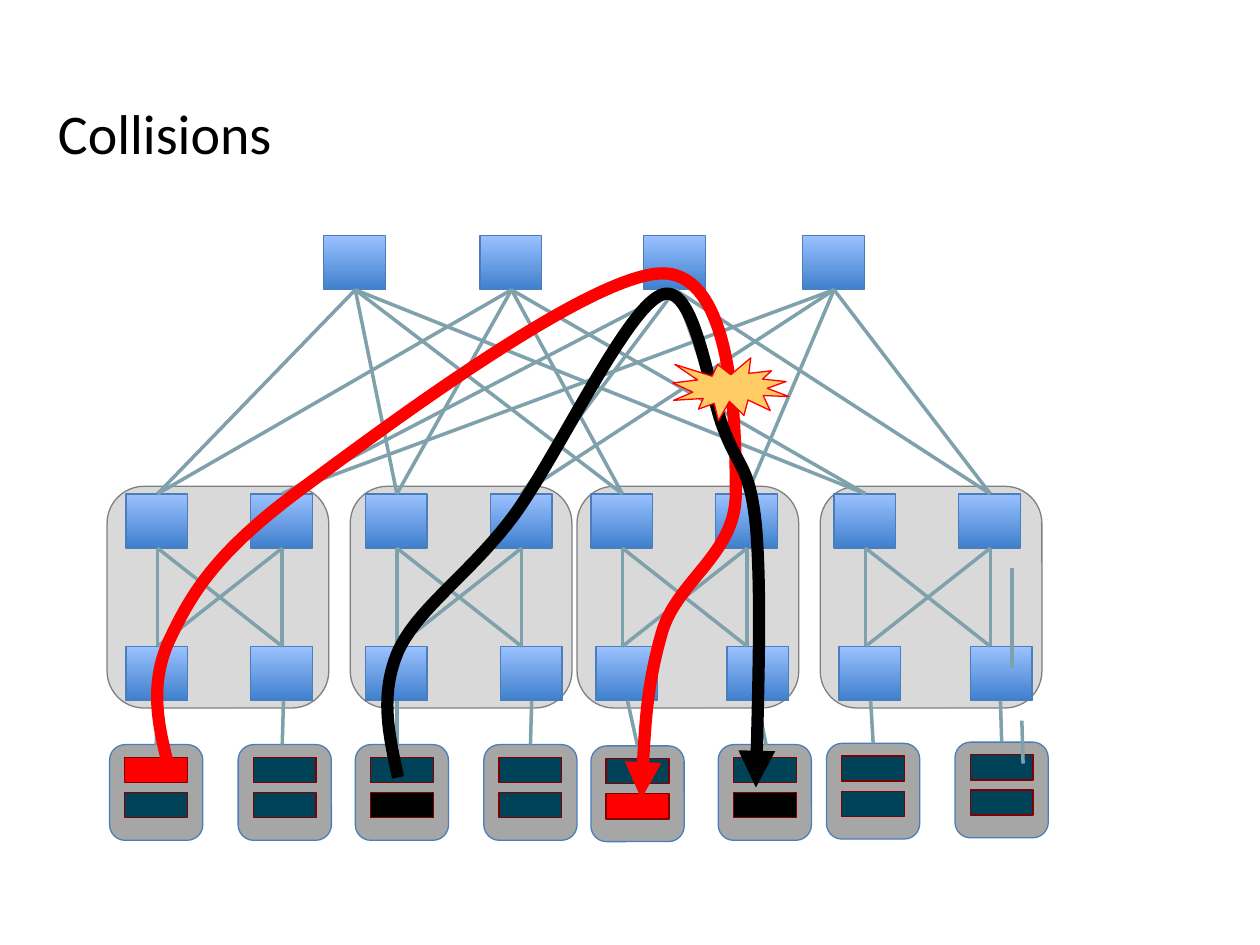
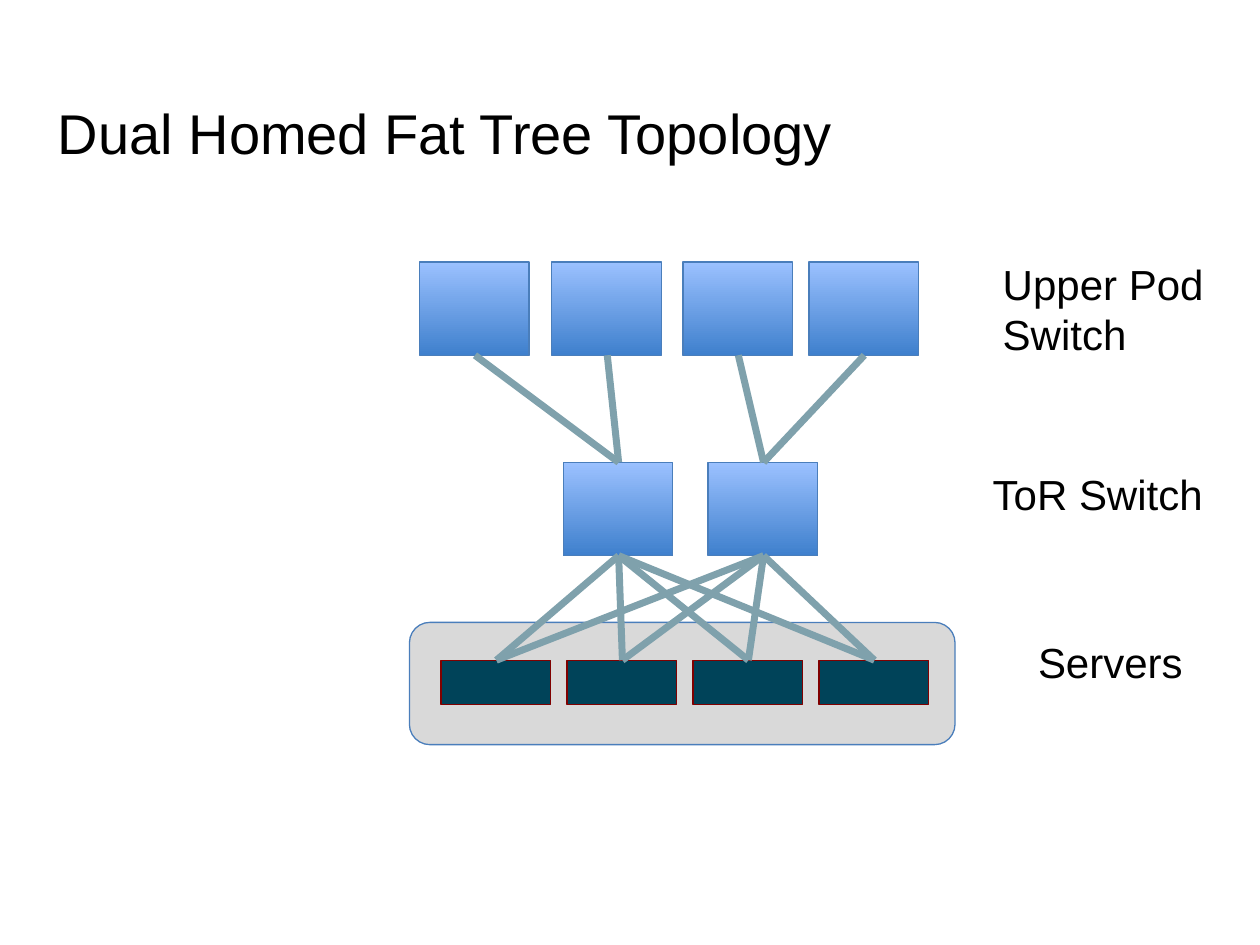
import itertools

import lxml.etree
import pptx
import pptx.dml.color
import pptx.enum.shapes
import pptx.enum.text
import pptx.oxml.ns
import pptx.util

EMU_PER_PX = 9144  # 100 px to the inch
SHAPES = pptx.enum.shapes.MSO_SHAPE
QN = pptx.oxml.ns.qn

COLORS = {
    "text": "000000",
    "switch_top": "9BC1FF",
    "switch_bottom": "3F80CD",
    "blue_line": "4A7EBB",
    "pod": "D9D9D9",
    "pod_line": "7F7F7F",
    "rack": "A6A6A6",
    "server": "004359",
    "server_line": "800000",
    "link": "7FA1AC",
    "red": "FF0000",
    "black": "000000",
    "burst": "FFCC66",
}
TITLE_BOX = (36, 50, 928, 109)
TITLE_FRAME = {
    "vertical_anchor": pptx.enum.text.MSO_ANCHOR.MIDDLE,
    "auto_size": pptx.enum.text.MSO_AUTO_SIZE.NONE,
    "word_wrap": True,
}
LABEL_FRAME = {
    "auto_size": pptx.enum.text.MSO_AUTO_SIZE.SHAPE_TO_FIT_TEXT,
    "word_wrap": False,
}

# Collisions slide
SWITCH_SIZE = (49, 43)
CORE_LEFTS = (257, 381, 511, 637)
CORE_TOP = 187
POD_TOP, POD_SIZE = 386, 176
UPPER_DROP, LOWER_DROP, UPPER_GAP = 6, 127, 99
PODS = (  # left, offset of first upper switch, offsets of lower switches
    (85, 15, (15, 114)),
    (278, 12, (12, 119)),
    (458, 11, (15, 119)),
    (651, 11, (15, 119)),
)
RACKS = (  # left, top, uplink top x, uplink bottom x, server colours
    (87, 591, 125, 124, ("red", "server")),
    (189, 591, 225, 224, ("server", "server")),
    (282, 591, 315, 315, ("server", "black")),
    (384, 591, 422, 421, ("server", "server")),
    (469, 592, 498, 506, ("server", "red")),
    (570, 591, 601, 608, ("server", "black")),
    (656, 590, 691, 693, ("server", "server")),
    (758, 589, 794, 795, ("server", "server")),
)
FLOWS = {  # start point, then three points for each curve
    "red": ((134, 609), (126, 577), (118, 545), (134, 509),
            (151, 473), (169, 441), (234, 392),
            (300, 343), (468, 217), (526, 217),
            (584, 217), (584, 345), (584, 392),
            (584, 439), (539, 460), (526, 500),
            (514, 541), (511, 587), (509, 634)),
    "black": ((316, 617), (309, 584), (301, 552), (316, 517),
              (332, 482), (373, 456), (408, 409),
              (443, 361), (497, 245), (525, 234),
              (552, 223), (562, 311), (575, 342),
              (587, 373), (595, 370), (600, 417),
              (604, 464), (602, 545), (600, 625)),
}
LOOSE_LINKS = (((803, 530), (803, 451)), ((812, 606), (811, 572)))

# Dual homed slide
TREE_BOX = (325, 208, 433, 383)
LABELS = (
    ((786, 200, 181, 91), ("Upper Pod", "Switch")),
    ((778, 367, 189, 51), ("ToR Switch",)),
    ((814, 500, 136, 51), ("Servers",)),
)


def px(value):
    return pptx.util.Emu(value * EMU_PER_PX)


def rgb(name):
    return pptx.dml.color.RGBColor.from_string(COLORS[name])


def set_attributes(target, values):
    for name, value in values.items():
        setattr(target, name, value)


def set_line(shape, color, points):
    shape.line.color.rgb = rgb(color)
    shape.line.width = pptx.util.Pt(points)


def add_block(shapes, kind, box, fill, line):
    shape = shapes.add_shape(kind, *map(px, box))
    shape.shadow.inherit = False
    shape.fill.solid()
    shape.fill.fore_color.rgb = rgb(fill)
    set_line(shape, line, 0.75)
    return shape


def add_switch(shapes, box):
    shape = add_block(shapes, SHAPES.RECTANGLE, box, "switch_top", "blue_line")
    shape.fill.gradient()
    shape.fill.gradient_angle = 270
    for stop, color in zip(shape.fill.gradient_stops, ("switch_top", "switch_bottom")):
        stop.color.rgb = rgb(color)


def add_link(shapes, start, end, points):
    connector = shapes.add_connector(
        pptx.enum.shapes.MSO_CONNECTOR.STRAIGHT, *map(px, (*start, *end)))
    set_line(connector, "link", points)
    lxml.etree.SubElement(connector._element.spPr, QN("a:effectLst"))


def add_flow(shapes, points, color):
    builder = shapes.build_freeform(*points[0], scale=EMU_PER_PX)
    builder.add_line_segments(points[1:], close=False)
    shape = builder.convert_to_shape()
    shape.shadow.inherit = False
    shape.fill.background()
    set_line(shape, color, 7)
    # Turn each three straight segments into one curve
    outline = shape._element.find(".//" + QN("a:path"))
    segments = outline.findall(QN("a:lnTo"))
    for first in range(0, len(segments), 3):
        curve = lxml.etree.SubElement(outline, QN("a:cubicBezTo"))
        for segment in segments[first:first + 3]:
            curve.append(segment[0])
            outline.remove(segment)
    arrowhead = lxml.etree.SubElement(shape.line._get_or_add_ln(), QN("a:tailEnd"))
    arrowhead.set("type", "triangle")


def write_lines(frame, lines, font_name, size):
    for index, line in enumerate(lines):
        paragraph = frame.paragraphs[0] if index == 0 else frame.add_paragraph()
        paragraph.alignment = pptx.enum.text.PP_ALIGN.LEFT
        run = paragraph.add_run()
        run.text = line
        set_attributes(run.font, {"name": font_name, "size": pptx.util.Pt(size)})
        run.font.color.rgb = rgb("text")


def add_titled_slide(presentation, title, font_name):
    slide = presentation.slides.add_slide(presentation.slide_layouts[5])
    shape = slide.shapes.title
    set_attributes(shape, dict(zip(("left", "top", "width", "height"), map(px, TITLE_BOX))))
    set_attributes(shape.text_frame, TITLE_FRAME)
    write_lines(shape.text_frame, (title,), font_name, 32)
    return slide


def draw_pod(shapes, left, top, upper_offset, lower_offsets):
    """Draw one pod and return the top centres of its upper switches."""
    width, height = SWITCH_SIZE
    add_block(shapes, SHAPES.ROUNDED_RECTANGLE, (left, top, POD_SIZE, POD_SIZE),
              "pod", "pod_line")
    upper_lefts = [left + upper_offset + step * UPPER_GAP for step in range(2)]
    for switch_left in upper_lefts:
        add_switch(shapes, (switch_left, top + UPPER_DROP, width, height))
    for offset in lower_offsets:
        add_switch(shapes, (left + offset, top + LOWER_DROP, width, height))
    centers = [switch_left + 25 for switch_left in upper_lefts]
    for lower, upper in itertools.product(centers, repeat=2):
        add_link(shapes, (lower, top + LOWER_DROP), (upper, top + UPPER_DROP + height), 2)
    return [(center, top + UPPER_DROP) for center in centers]


def draw_rack(shapes, left, top, uplink_top, uplink_bottom, server_colors):
    add_block(shapes, SHAPES.ROUNDED_RECTANGLE, (left, top, 74, 76), "rack", "blue_line")
    for row, color in enumerate(server_colors):
        add_block(shapes, SHAPES.RECTANGLE, (left + 12, top + 10 + 28 * row, 50, 20),
                  color, "server_line")
    add_link(shapes, (uplink_bottom, top), (uplink_top, 556), 2)


def draw_core(shapes, pod_ports):
    """Left switch of each pod joins cores 1 and 2, right switch cores 3 and 4."""
    width, height = SWITCH_SIZE
    for left in CORE_LEFTS:
        add_switch(shapes, (left, CORE_TOP, width, height))
    for ports in pod_ports:
        for index, left in enumerate(CORE_LEFTS):
            add_link(shapes, ports[index // 2], (left + 25, CORE_TOP + height), 2)


def build_collisions(presentation):
    shapes = add_titled_slide(presentation, "Collisions", "Calibri").shapes
    pod_ports = [draw_pod(shapes, left, POD_TOP, upper, lower)
                 for left, upper, lower in PODS]
    draw_core(shapes, pod_ports)
    for rack in RACKS:
        draw_rack(shapes, *rack)
    # Colliding flows
    for color, points in FLOWS.items():
        add_flow(shapes, points, color)
    add_block(shapes, SHAPES.EXPLOSION1, (534, 284, 92, 50), "burst", "red")
    for start, end in LOOSE_LINKS:
        add_link(shapes, start, end, 2)


def draw_tree(shapes, box):
    left, top, width, height = box
    switch_width, switch_height, half = 87, 74, 44
    upper_lefts = [left + offset for offset in (8, 113, 217, 317)]
    tor_lefts = [left + offset for offset in (122, 237)]
    server_lefts = [left + 25 + 100 * step for step in range(4)]
    tor_top, server_top = top + 159, top + 316
    # Server shelf
    add_block(shapes, SHAPES.ROUNDED_RECTANGLE, (left, top + height - 97, width, 97),
              "pod", "blue_line")
    for server_left in server_lefts:
        add_block(shapes, SHAPES.RECTANGLE, (server_left, server_top, switch_width, 35),
                  "server", "server_line")
    # Switches
    for row_top, lefts in ((top, upper_lefts), (tor_top, tor_lefts)):
        for switch_left in lefts:
            add_switch(shapes, (switch_left, row_top, switch_width, switch_height))
    # Links: each upper switch to one ToR, each server to both
    for index, upper_left in enumerate(upper_lefts):
        add_link(shapes, (tor_lefts[index // 2] + half, tor_top),
                 (upper_left + half, top + switch_height), 4)
    for tor_left, server_left in itertools.product(tor_lefts, server_lefts):
        add_link(shapes, (server_left + half, server_top),
                 (tor_left + half, tor_top + switch_height), 4)


def draw_label(shapes, box, lines):
    frame = shapes.add_textbox(*map(px, box)).text_frame
    set_attributes(frame, LABEL_FRAME)
    write_lines(frame, lines, "Arial", 24)


def build_dual_homed(presentation):
    slide = add_titled_slide(presentation, "Dual Homed Fat Tree Topology", "Arial")
    draw_tree(slide.shapes.add_group_shape().shapes, TREE_BOX)
    for box, lines in LABELS:
        draw_label(slide.shapes, box, lines)


def main():
    presentation = pptx.Presentation()
    set_attributes(presentation, {"slide_width": px(1000), "slide_height": px(750)})
    build_collisions(presentation)
    build_dual_homed(presentation)
    presentation.save("out.pptx")


if __name__ == "__main__":
    main()
